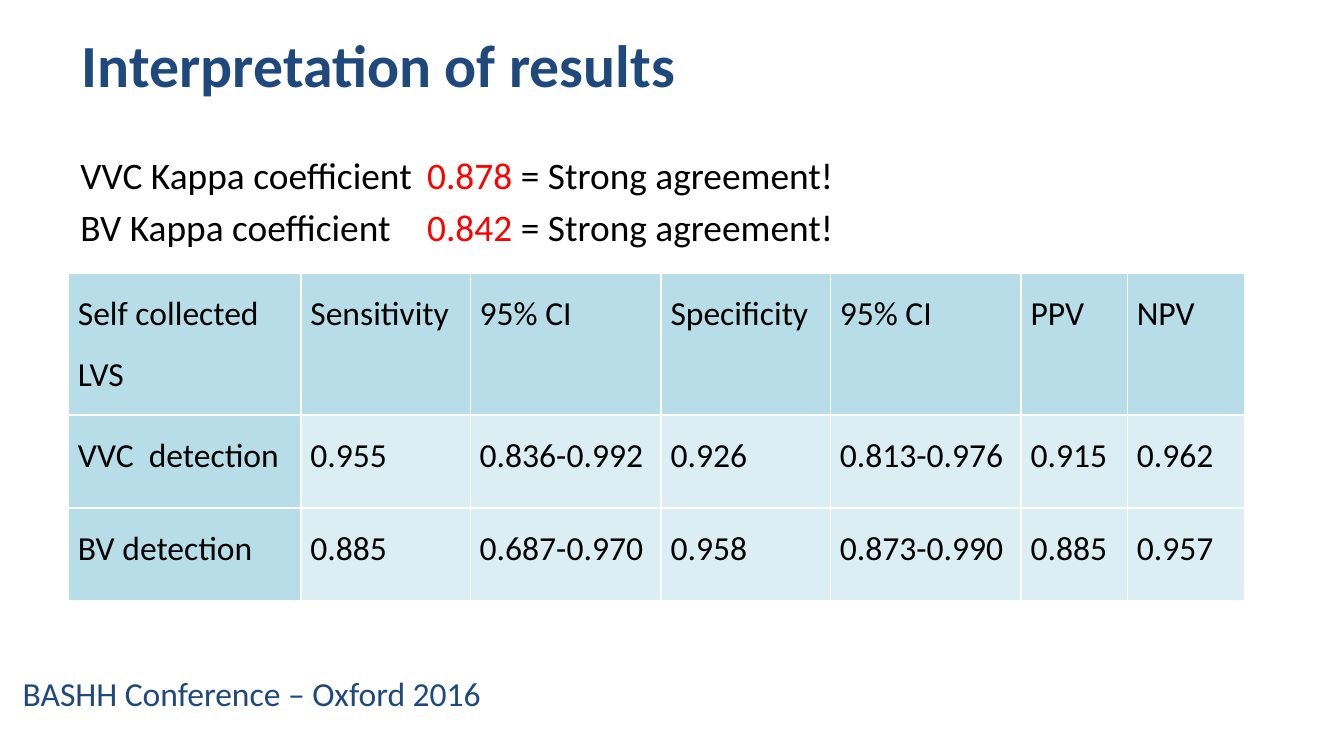
from dataclasses import dataclass

from lxml.etree import SubElement
from pptx import Presentation
from pptx.dml.color import RGBColor
from pptx.enum.text import MSO_ANCHOR, PP_ALIGN
from pptx.oxml.ns import qn
from pptx.util import Inches, Pt


@dataclass(frozen=True)
class Theme:
    font: str = "Calibri"
    navy: RGBColor = RGBColor(0x1F, 0x49, 0x7D)
    black: RGBColor = RGBColor(0, 0, 0)
    red: RGBColor = RGBColor(0xFF, 0, 0)
    header_fill: RGBColor = RGBColor(0xB7, 0xDE, 0xE8)
    value_fill: RGBColor = RGBColor(0xDB, 0xEE, 0xF4)
    border: str = "FFFFFF"
    title_size: Pt = Pt(32)
    body_size: Pt = Pt(20)
    small_size: Pt = Pt(18)


theme = Theme()


def set_font(para, size, color, bold=False):
    para.font.name = theme.font
    para.font.size = size
    para.font.color.rgb = color
    para.font.bold = bold


def add_borders(cell):
    properties = cell._tc.get_or_add_tcPr()
    for side in ("a:lnL", "a:lnR", "a:lnT", "a:lnB"):
        line = SubElement(properties, qn(side), w=str(Pt(1)))
        SubElement(SubElement(line, qn("a:solidFill")), qn("a:srgbClr"), val=theme.border)


deck = Presentation()
deck.slide_width, deck.slide_height = Inches(10), Inches(10 * 9 / 16)
page = deck.slides.add_slide(deck.slide_layouts[5])

# Title
title = page.shapes.title
title.left, title.top = Inches(0.51), Inches(0)
title.width, title.height = Inches(9), Inches(0.94)
title.text_frame.text = "Interpretation of results"
title.text_frame.vertical_anchor = MSO_ANCHOR.MIDDLE
para = title.text_frame.paragraphs[0]
para.alignment = PP_ALIGN.LEFT
set_font(para, theme.title_size, theme.navy, bold=True)

# Conference footer
footer = page.shapes.add_textbox(Inches(0.07), Inches(4.96), Inches(4.78), Inches(0.66))
footer.text_frame.word_wrap = True
footer.text_frame.text = "BASHH Conference – Oxford 2016"
set_font(footer.text_frame.paragraphs[0], theme.small_size, theme.navy)

# Kappa coefficients, aligned on a tab stop
kappa_box = page.shapes.add_textbox(Inches(0.5), Inches(1.08), Inches(9), Inches(0.9))
kappa_box.text_frame.word_wrap = True
for index, (label, kappa) in enumerate([("VVC", "0.878"), ("BV", "0.842")]):
    para = kappa_box.text_frame.paragraphs[0] if index == 0 else kappa_box.text_frame.add_paragraph()
    if index:
        para.space_before = Pt(4)
    tabs = SubElement(para._p.get_or_add_pPr(), qn("a:tabLst"))
    SubElement(tabs, qn("a:tab"), pos=str(Inches(2.58)), algn="l")
    set_font(para, theme.body_size, theme.black)
    para.add_run().text = f"{label} Kappa coefficient\t"
    span = para.add_run()
    span.text = f"{kappa} "
    span.font.color.rgb = theme.red
    para.add_run().text = "= Strong agreement!"

# Accuracy table
rows = [
    ["Self collected LVS", "Sensitivity", "95% CI", "Specificity", "95% CI", "PPV", "NPV"],
    ["VVC  detection", "0.955", "0.836-0.992", "0.926", "0.813-0.976", "0.915", "0.962"],
    ["BV detection", "0.885", "0.687-0.970", "0.958", "0.873-0.990", "0.885", "0.957"],
]
column_widths = [1.73, 1.26, 1.42, 1.26, 1.42, 0.79, 0.87]
row_heights = [1.06, 0.69, 0.69]
table = page.shapes.add_table(
    len(rows), len(column_widths), Inches(0.51), Inches(2.03),
    Inches(sum(column_widths)), Inches(sum(row_heights)),
).table
for column, width in zip(table.columns, column_widths):
    column.width = Inches(width)
for row_index, (values, height) in enumerate(zip(rows, row_heights)):
    table.rows[row_index].height = Inches(height)
    for column_index, value in enumerate(values):
        cell = table.cell(row_index, column_index)
        cell.text = value
        cell.margin_left = cell.margin_right = Inches(0.07)
        cell.margin_top = cell.margin_bottom = Inches(0)
        add_borders(cell)
        is_header = row_index == 0 or column_index == 0
        cell.fill.solid()
        cell.fill.fore_color.rgb = theme.header_fill if is_header else theme.value_fill
        para = cell.text_frame.paragraphs[0]
        para.line_spacing = 1.5
        set_font(para, theme.small_size, theme.black)

deck.save("out.pptx")
